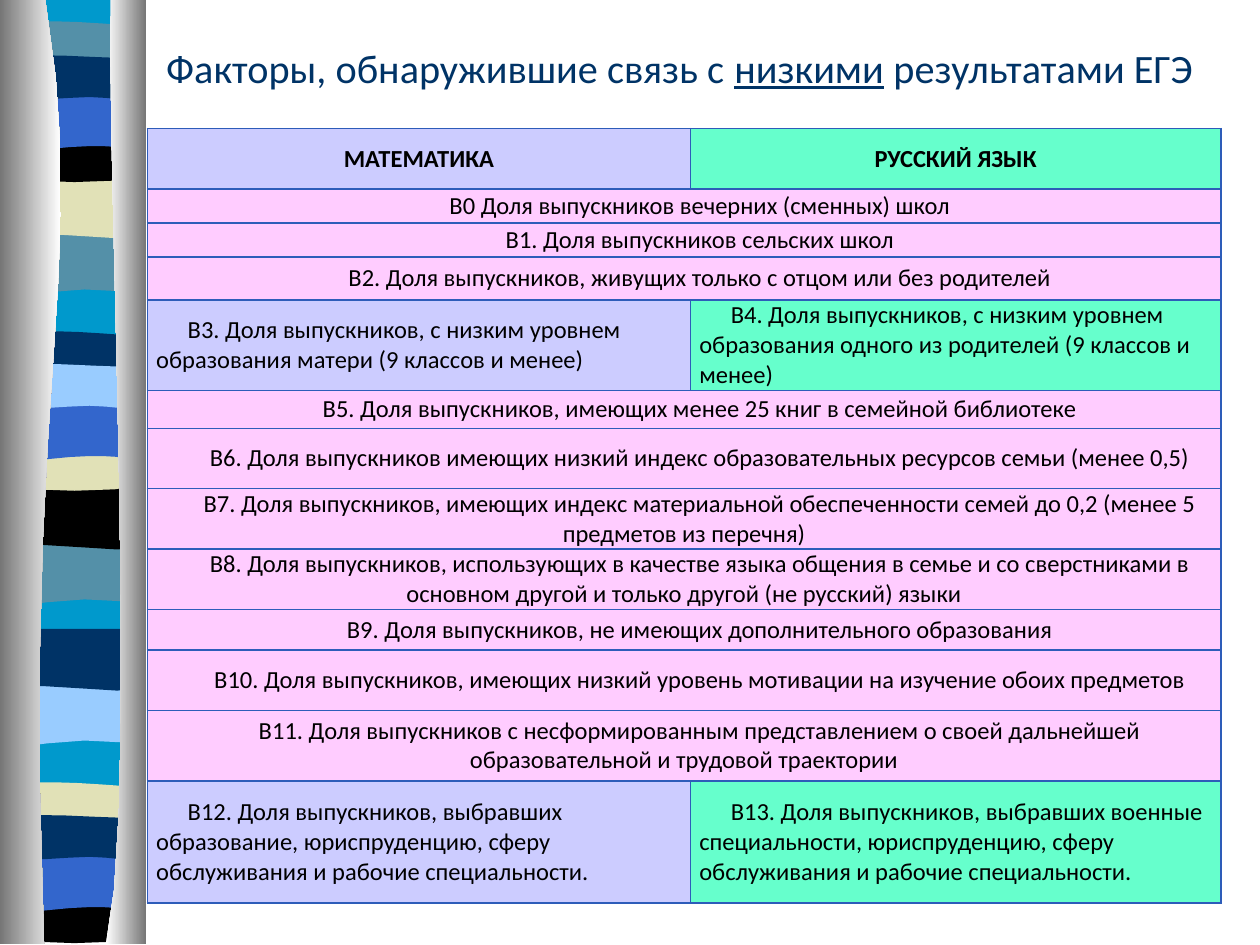
from lxml.etree import SubElement
from pptx import Presentation
from pptx.dml.color import RGBColor
from pptx.enum.text import MSO_ANCHOR, PP_ALIGN
from pptx.oxml import parse_xml
from pptx.oxml.ns import nsdecls, qn
from pptx.util import Inches, Pt

NAVY = RGBColor(0x00, 0x33, 0x66)
BLACK = RGBColor(0x00, 0x00, 0x00)
WHITE = RGBColor(0xFF, 0xFF, 0xFF)
GRAY = RGBColor(0x76, 0x76, 0x76)
CYAN = RGBColor(0x00, 0x99, 0xCC)
TEAL = RGBColor(0x54, 0x90, 0xA8)
SAND = RGBColor(0xE1, 0xE1, 0xB7)
BLUE = RGBColor(0x33, 0x66, 0xCC)
SKY = RGBColor(0x99, 0xCC, 0xFF)
LILAC = RGBColor(0xCC, 0xCC, 0xFF)
MINT = RGBColor(0x66, 0xFF, 0xCC)
PINK = RGBColor(0xFF, 0xCC, 0xFF)
EDGE = "2D5CB9"
FONT = "Calibri"

WAVES = [
    [(1.13, 0), (1.13, 0.47), (0.38, 0.39, 0.23, 0.55, 0.05, 0.47), (0.05, 0)],
    [(1.13, 0), (1.13, 0.47), (0.95, 0.54, 0.38, 0.41, 0.05, 0.47), (0.05, 0)],
    [(1.13, 0.05), (1.13, 0.29), (0.95, 0.33, 0.23, 0.33, 0.05, 0.29), (0.05, 0.05),
     (0.12, 0, 0.28, 0.01, 0.46, 0.01), (0.64, 0.01, 0.99, 0.04, 1.13, 0.05)],
    [(1.13, 0), (1.13, 0.32), (0.95, 0.38, 0.23, 0.38, 0.05, 0.32), (0.05, 0),
     (0.71, 0.05, 0.9, 0, 1.13, 0)],
    [(1.13, 0), (1.13, 0.47), (0.96, 0.42, 0.89, 0.42, 0.71, 0.42),
     (0.53, 0.42, 0.21, 0.47, 0.05, 0.47), (0.05, 0)],
    [(1.13, 0.05), (1.13, 0.36), (1.06, 0.41, 0.89, 0.36, 0.71, 0.36),
     (0.53, 0.36, 0.16, 0.41, 0.05, 0.36), (0.05, 0.05),
     (0.2, 0, 0.78, 0.05, 0.96, 0.05), (1.13, 0.05)],
]
CYCLES = [
    ([1.85, 1.4, 0.16, 1.08, 0.74, 0.41], [TEAL, SAND, TEAL, BLACK, BLUE, NAVY]),
    ([4.31, 3.87, 2.62, 3.53, 3.2, 2.86], [TEAL, BLACK, NAVY, SAND, BLUE, SKY]),
    ([5.43, 4.99, 6.2, 7.12, 6.78, 6.44], [SKY, NAVY, SAND, BLACK, BLUE, NAVY]),
]
BASE = [(0.06, 0), (1.14, 0), (1.14, 7.47), (0.06, 7.47)]
LEFT = [(0.36, 0), (0.72, 2.16, 0.17, 2.96, 0.35, 7.49), (0, 7.49), (0, 0)]
RIGHT = [(0.88, 0), (0.84, 1.25, 1.11, 6.46, 0.84, 7.49), (1.16, 7.49), (1.16, 0)]

TITLE = ["Факторы, обнаружившие связь с ", "низкими", " результатами ЕГЭ"]
COLS = [4.31, 4.21]
ROWS = [
    (0.48, "МАТЕМАТИКА", "РУССКИЙ ЯЗЫК"),
    (0.27, "В0 Доля выпускников вечерних (сменных) школ"),
    (0.27, "В1. Доля выпускников сельских школ"),
    (0.34, "В2. Доля выпускников, живущих только с отцом или без родителей"),
    (0.72, "В3. Доля выпускников, с низким уровнем образования матери (9 классов и менее)",
     "В4. Доля выпускников, с низким уровнем образования одного из родителей "
     "(9 классов и менее)"),
    (0.3, "В5. Доля выпускников, имеющих менее 25 книг в семейной библиотеке"),
    (0.48, "В6. Доля выпускников имеющих низкий индекс образовательных ресурсов семьи "
     "(менее 0,5)"),
    (0.48, "В7. Доля выпускников, имеющих индекс материальной обеспеченности семей "
     "до 0,2 (менее 5 предметов из перечня)"),
    (0.48, "В8. Доля выпускников, использующих в качестве языка общения в семье и со "
     "сверстниками в основном другой и только другой (не русский) языки"),
    (0.32, "В9. Доля выпускников, не имеющих дополнительного образования"),
    (0.48, "В10. Доля выпускников, имеющих низкий уровень мотивации на изучение обоих "
     "предметов"),
    (0.56, "В11. Доля выпускников с несформированным представлением о своей "
     "дальнейшей образовательной и трудовой траектории"),
    (0.97, "В12. Доля выпускников, выбравших образование, юриспруденцию, сферу "
     "обслуживания и рабочие специальности.",
     "В13. Доля выпускников, выбравших военные специальности, юриспруденцию, сферу "
     "обслуживания и рабочие специальности."),
]


def trace(parts, steps):
    points = [parts[0]]
    for part in parts[1:]:
        if len(part) == 2:
            points.append(part)
            continue
        nodes = [points[-1], part[:2], part[2:4], part[4:]]
        for step in range(1, steps + 1):
            t = step / steps
            mix = [(1 - t) ** 3, 3 * t * (1 - t) ** 2, 3 * t * t * (1 - t), t ** 3]
            points.append(tuple(sum(m * n[axis] for m, n in zip(mix, nodes))
                                for axis in (0, 1)))
    return points


def add_form(slide, parts, steps, top=0):
    points = [(Inches(x), Inches(y + top)) for x, y in trace(parts, steps)]
    pen = slide.shapes.build_freeform(*points[0])
    pen.add_line_segments(points[1:], close=True)
    shape = pen.convert_to_shape()
    shape.shadow.inherit = False
    shape.line.fill.background()
    return shape


def add_band(slide, parts, color, top=0):
    fill = add_form(slide, parts, 4, top).fill
    fill.solid()
    fill.fore_color.rgb = color


def add_fold(slide, parts, colors):
    fill = add_form(slide, parts, 10).fill
    fill.gradient()
    fill.gradient_angle = 0
    for stop, color in zip(fill.gradient_stops, colors):
        stop.color.rgb = color


def style(font, size, color):
    font.name = FONT
    font.size = Pt(size)
    font.color.rgb = color


def add_title(slide):
    box = slide.shapes.add_textbox(Inches(0.94), Inches(0.16), Inches(8.91), Inches(0.75))
    frame = box.text_frame
    frame.word_wrap = True
    frame.vertical_anchor = MSO_ANCHOR.MIDDLE
    line = frame.paragraphs[0]
    line.alignment = PP_ALIGN.CENTER
    for text in TITLE:
        run = line.add_run()
        run.text = text
        style(run.font, 23, NAVY)
        run.font.underline = text == TITLE[1]


def add_edges(cell):
    props = cell._tc.get_or_add_tcPr()
    for index, side in enumerate("LRTB"):
        edge = parse_xml(f'<a:ln{side} {nsdecls("a")} w="{Pt(1)}"/>')
        fill = SubElement(edge, qn("a:solidFill"))
        SubElement(fill, qn("a:srgbClr"), val=EDGE)
        props.insert(index, edge)


def fill_cell(cell, text, color, head, wide):
    cell.fill.solid()
    cell.fill.fore_color.rgb = color
    cell.vertical_anchor = MSO_ANCHOR.MIDDLE
    cell.margin_left = cell.margin_right = Inches(0.07)
    cell.margin_top = cell.margin_bottom = 0
    cell.text_frame.text = text
    line = cell.text_frame.paragraphs[0]
    line.alignment = PP_ALIGN.CENTER if head or wide else PP_ALIGN.LEFT
    line.space_after = Pt(3)
    if not head:
        line._p.get_or_add_pPr().set("indent", str(Inches(0.25)))
    for run in line.runs:
        style(run.font, 14, BLACK)
        run.font.bold = head


def add_grid(slide):
    frame = slide.shapes.add_table(len(ROWS), len(COLS), Inches(1.17), Inches(1.02),
                                   Inches(sum(COLS)), Inches(sum(r[0] for r in ROWS)))
    table = frame.table
    for col, width in zip(table.columns, COLS):
        col.width = Inches(width)
    for index, (height, *texts) in enumerate(ROWS):
        table.rows[index].height = Inches(height)
        cells = [table.cell(index, col) for col in range(len(COLS))]
        wide = len(texts) == 1
        if wide:
            cells[0].merge(cells[1])
        for cell, text, color in zip(cells, texts, [PINK] if wide else [LILAC, MINT]):
            fill_cell(cell, text, color, index == 0, wide)
        for cell in cells:
            add_edges(cell)


def main():
    deck = Presentation()
    deck.slide_width = Inches(10)
    deck.slide_height = Inches(7.5)
    slide = deck.slides.add_slide(deck.slide_layouts[6])
    add_band(slide, BASE, CYAN)
    for tops, colors in CYCLES:
        for wave, top, color in zip(WAVES, tops, colors):
            add_band(slide, wave, color, top)
    add_fold(slide, LEFT, [GRAY, WHITE])
    add_fold(slide, RIGHT, [WHITE, GRAY])
    add_title(slide)
    add_grid(slide)
    deck.save("out.pptx")


if __name__ == "__main__":
    main()
